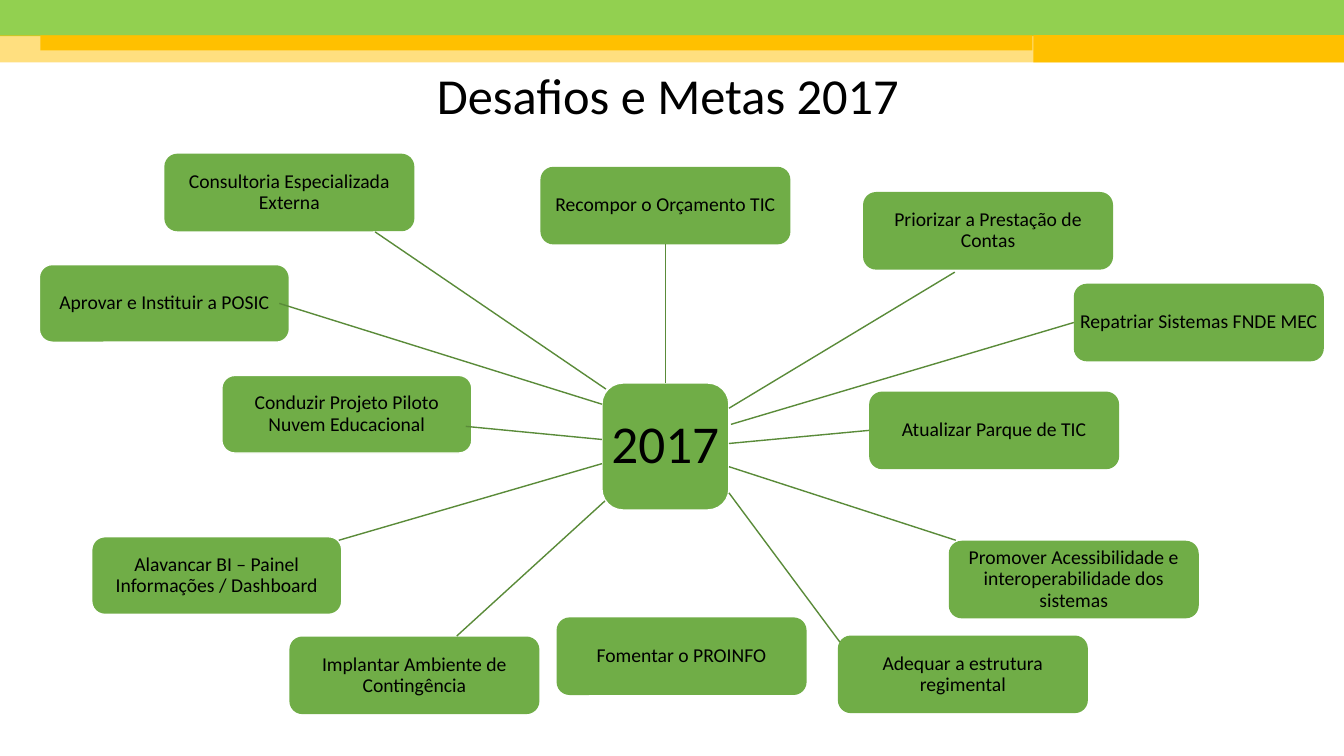
from dataclasses import dataclass
from lxml import etree
from pptx import Presentation
from pptx.dml.color import RGBColor
from pptx.enum.shapes import MSO_CONNECTOR, MSO_SHAPE
from pptx.enum.text import MSO_ANCHOR, PP_ALIGN
from pptx.oxml.ns import qn
from pptx.util import Inches, Pt

RECT, ROUNDED = MSO_SHAPE.RECTANGLE, MSO_SHAPE.ROUNDED_RECTANGLE
STRAIGHT = MSO_CONNECTOR.STRAIGHT
CENTER, MIDDLE = PP_ALIGN.CENTER, MSO_ANCHOR.MIDDLE
TOP, LEFT, BOTTOM = 0, 1, 2


@dataclass(frozen=True)
class Theme:
    """Colours, font and type sizes of the slide."""
    lime: str = "92D050"
    amber: str = "FFC000"
    green: str = "70AD47"
    spoke: str = "5A8B39"
    white: str = "FFFFFF"
    black: str = "000000"
    font: str = "Calibri"
    title: int = 36
    hub: int = 38
    goal: int = 14


@dataclass(frozen=True)
class Goal:
    """A goal box: centre and spoke ends as offsets from the hub centre."""
    text: str
    center: tuple
    spoke: tuple = ()
    side: int | None = None
    hub_side: int | None = None
    outlined: bool = False


THEME = Theme()
HUB_SIZE = (1.26, 1.26)
GOAL_SIZE = (2.48, 0.77)
GOALS = [
    Goal("Recompor o Orçamento TIC", (0, -2.39), ((0, -0.63), (0, -2.01)), BOTTOM, TOP),
    Goal("Priorizar a Prestação de Contas", (3.2, -2.14), ((0.63, -0.38), (2.87, -1.73))),
    Goal("Repatriar Sistemas FNDE MEC", (5.29, -1.23), ((0.65, -0.22), (4.05, -1.23)), LEFT),
    Goal("Atualizar Parque de TIC", (3.26, -0.16), ((0.63, -0.03), (2.02, -0.16)), LEFT),
    Goal("Promover Acessibilidade e interoperabilidade dos sistemas", (4.05, 1.32),
         ((0.63, 0.2), (2.88, 0.93))),
    Goal("Adequar a estrutura regimental", (2.95, 2.26), ((0.63, 0.46), (1.73, 1.94))),
    Goal("Fomentar o PROINFO", (0.16, 2.08)),
    Goal("Implantar Ambiente de Contingência", (-2.49, 2.27), ((-0.6, 0.54), (-2.07, 1.88))),
    Goal("Alavancar BI – Painel Informações / Dashboard", (-4.45, 1.28),
         ((-0.63, 0.17), (-3.24, 0.93)), outlined=True),
    Goal("Conduzir Projeto Piloto Nuvem Educacional", (-3.16, -0.32),
         ((-0.63, -0.07), (-1.98, -0.2)), outlined=True),
    Goal("Aprovar e Instituir a POSIC", (-4.97, -1.42),
         ((-0.63, -0.42), (-3.83, -1.42)), outlined=True),
    Goal("Consultoria Especializada Externa", (-3.73, -2.52), ((-0.59, -0.57), (-2.88, -2.13))),
]


def rgb(value):
    """Return the colour object for a hex value."""
    return RGBColor.from_string(value)


def add_block(s, kind, box, fill):
    """Add a plain filled shape without line or shadow."""
    sp = s.shapes.add_shape(kind, *(Inches(v) for v in box))
    sp.shadow.inherit = False
    sp.fill.solid()
    sp.fill.fore_color.rgb = rgb(fill)
    sp.line.fill.background()
    return sp


def format_text(tf, text, size):
    """Write one centred paragraph in the theme font."""
    tf.text = text
    tf.vertical_anchor = MIDDLE
    p = tf.paragraphs[0]
    p.alignment = CENTER
    font = p.runs[0].font
    font.name, font.size = THEME.font, Pt(size)
    font.color.rgb = rgb(THEME.black)


def add_header(s, box):
    """Draw the coloured bands across the top."""
    x, y, w, h = box
    band_y, right_w = y + 0.35, 3.08
    band_h = h - 0.35
    add_block(s, RECT, (x, y, w, 0.36), THEME.lime)
    pale = add_block(s, RECT, (x, band_y, w, band_h), THEME.amber)
    color = pale.fill._xPr.find(".//" + qn("a:srgbClr"))
    etree.SubElement(color, qn("a:alpha"), val="50000")
    add_block(s, RECT, (x + 0.4, band_y, 9.84, 0.15), THEME.amber)
    add_block(s, RECT, (x + w - right_w, band_y, right_w, band_h), THEME.amber)


def add_title(s, box):
    """Place and format the title placeholder."""
    sp = s.shapes.title
    sp.left, sp.top, sp.width, sp.height = (Inches(v) for v in box)
    format_text(sp.text_frame, "Desafios e Metas 2017", THEME.title)
    sp.text_frame.word_wrap = False


def add_node(s, center, size, text, points, inset, outlined):
    """Draw a rounded box with its label around a centre."""
    (cx, cy), (w, h) = center, size
    sp = add_block(s, ROUNDED, (cx - w / 2, cy - h / 2, w, h), THEME.green)
    if outlined:
        sp.line.color.rgb = rgb(THEME.white)
        sp.line.width = Pt(1)
    tf = sp.text_frame
    tf.margin_left = tf.margin_right = tf.margin_top = tf.margin_bottom = Inches(inset)
    tf.word_wrap = True
    format_text(tf, text, points)
    tf.paragraphs[0].line_spacing = 0.9
    return sp


def add_spoke(s, start, end):
    """Draw a thin straight line between two points."""
    line = s.shapes.add_connector(STRAIGHT, *(Inches(v) for v in (*start, *end)))
    line.line.color.rgb = rgb(THEME.spoke)
    line.line.width = Pt(1)
    etree.SubElement(line._element.spPr, qn("a:effectLst"))
    return line


def add_goal_map(s, box):
    """Draw the hub in the middle of the box and the goals around it."""
    x, y, w, h = box
    cx, cy = x + w / 2, y + h / 2
    hub = add_node(s, (cx, cy), HUB_SIZE, "2017", THEME.hub, 0.03, True)
    for goal in GOALS:
        dx, dy = goal.center
        node = add_node(s, (cx + dx, cy + dy), GOAL_SIZE, goal.text,
                        THEME.goal, 0.01, goal.outlined)
        if not goal.spoke:
            continue
        line = add_spoke(s, *((cx + px, cy + py) for px, py in goal.spoke))
        if goal.hub_side is not None:
            line.begin_connect(hub, goal.hub_side)
        if goal.side is not None:
            line.end_connect(node, goal.side)


def main():
    """Build and save the slide."""
    prs = Presentation()
    prs.slide_width, prs.slide_height = Inches(13.33), Inches(7.5)
    s = prs.slides.add_slide(prs.slide_layouts[5])
    add_header(s, (0, 0, 13.33, 0.62))
    add_title(s, (4.23, 0.58, 4.79, 0.71))
    add_goal_map(s, (0.07, 1.52, 13.06, 5.82))
    prs.save("out.pptx")


if __name__ == "__main__":
    main()
